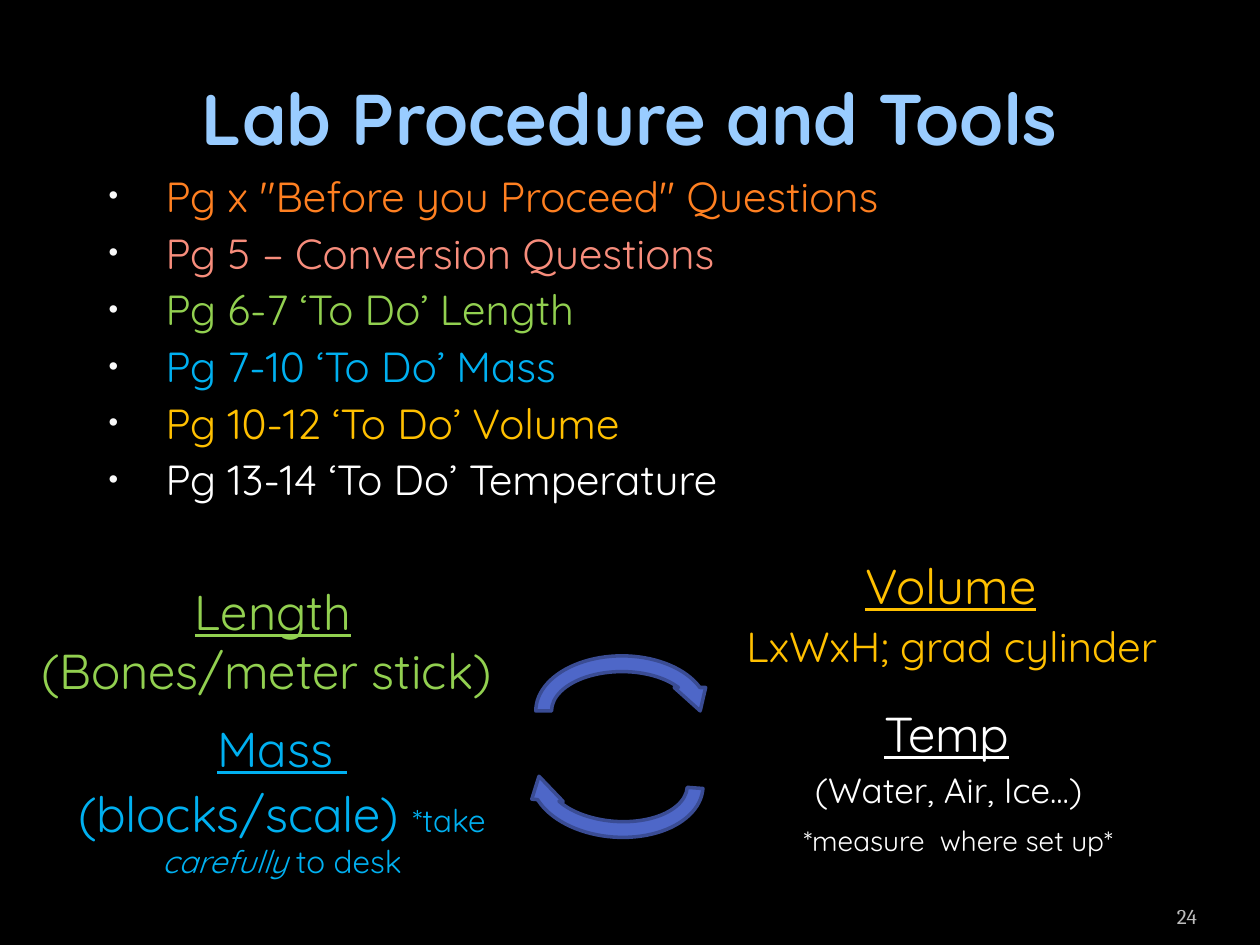
from lxml import etree
from pptx import Presentation
from pptx.dml.color import RGBColor
from pptx.enum.shapes import MSO_SHAPE
from pptx.enum.text import MSO_ANCHOR, MSO_AUTO_SIZE, PP_ALIGN
from pptx.oxml.ns import qn
from pptx.util import Pt

PX = 914400 / 126
CENTER, LEFT, RIGHT = PP_ALIGN.CENTER, PP_ALIGN.LEFT, PP_ALIGN.RIGHT
TOP, MIDDLE, BOTTOM = MSO_ANCHOR.TOP, MSO_ANCHOR.MIDDLE, MSO_ANCHOR.BOTTOM
ARROW = MSO_SHAPE.CIRCULAR_ARROW

BLACK = RGBColor(0x00, 0x00, 0x00)
WHITE = RGBColor(0xFF, 0xFF, 0xFF)
SKY = RGBColor(0x99, 0xCC, 0xFF)
ORANGE = RGBColor(0xFF, 0x80, 0x21)
CORAL = RGBColor(0xF7, 0x8D, 0x7C)
GREEN = RGBColor(0x92, 0xD0, 0x50)
BLUE = RGBColor(0x00, 0xB0, 0xF0)
GOLD = RGBColor(0xFF, 0xC0, 0x00)
GRAY = RGBColor(0xBD, 0xBD, 0xBD)
INDIGO = RGBColor(0x4E, 0x67, 0xC8)
NAVY = RGBColor(0x3A, 0x4C, 0x94)
DOT = "F9F9F9"

TITLE = "Lab Procedure and Tools"
STEPS = [
    ("Pg x \"Before you Proceed\" Questions", ORANGE),
    ("Pg 5 – Conversion Questions", CORAL),
    ("Pg 6-7 ‘To Do’ Length", GREEN),
    ("Pg 7-10 ‘To Do’ Mass", BLUE),
    ("Pg 10-12 ‘To Do’ Volume", GOLD),
    ("Pg 13-14 ‘To Do’ Temperature", WHITE),
]
# Box, colour, left margin, then paragraphs of (text, size, style) runs
TOOLS = [
    ((582, 549, 689, 134), GOLD, 62, [
        [("Volume", 28, "u"), (" ", 28, "")],
        [("LxWxH; grad cylinder ", 24, "")],
    ]),
    ((13, 575, 515, 84), GREEN, 5, [
        [("Length", 28, "u"), (" (Bones/meter stick) ", 28, "")],
    ]),
    ((663, 697, 576, 84), WHITE, 5, [
        [("Temp", 28, "u"), (" ", 28, "")],
        [("(Water, Air, Ice...) ", 20, "")],
        [(" ", 20, ""), ("*measure  where set up*", 16, "")],
    ]),
    ((20, 712, 519, 126), BLUE, 5, [
        [("Mass ", 28, "u")],
        [("(blocks/scale) ", 28, ""), ("*take ", 18, ""),
         ("carefully", 18, "i"), (" to desk", 18, "")],
    ]),
]
ARROWS = [((528, 648, 188, 126), 0), ((523, 719, 188, 126), 184.3)]


def emu(px):
    return round(px * PX)


def place(shape, box):
    shape.left, shape.top, shape.width, shape.height = map(emu, box)


def setup(shape, box, anchor=TOP):
    place(shape, box)
    frame = shape.text_frame
    frame.word_wrap = True
    frame.auto_size = MSO_AUTO_SIZE.NONE
    frame.vertical_anchor = anchor
    return frame


def new_par(frame, first, align=CENTER, margin=0, indent=0):
    par = frame.paragraphs[0] if first else frame.add_paragraph()
    par.alignment = align
    par.space_before = Pt(0 if first else 3.6)
    props = par._p.get_or_add_pPr()
    props.set("marL", str(emu(margin)))
    props.set("indent", str(emu(indent)))
    return par


def write(par, text, size=24, color=WHITE, font="Quicksand", bold=False, style=""):
    run = par.add_run()
    run.text = text
    face = run.font
    face.name, face.size, face.bold = font, Pt(size), bold
    face.color.rgb = color
    face.underline = "u" in style
    face.italic = "i" in style


def bullet(par):
    props = par._p.get_or_add_pPr()
    tint = etree.SubElement(props, qn("a:buClr"))
    etree.SubElement(tint, qn("a:srgbClr"), val=DOT)
    etree.SubElement(props, qn("a:buSzPct"), val="65000")
    etree.SubElement(props, qn("a:buChar"), char="•")


def main():
    deck = Presentation()
    deck.slide_width, deck.slide_height = emu(1260), emu(945)
    slide = deck.slides.add_slide(deck.slide_layouts[1])
    slide.background.fill.solid()
    slide.background.fill.fore_color.rgb = BLACK
    shapes = slide.shapes

    frame = setup(shapes.title, (63, 38, 1134, 157), MIDDLE)
    write(new_par(frame, True), TITLE, size=41, color=SKY, bold=True)

    frame = setup(slide.placeholders[1], (77, 164, 1106, 369))
    for i, (text, color) in enumerate(STEPS):
        par = new_par(frame, i == 0, LEFT, 76, -57)
        bullet(par)
        write(par, text, color=color)

    for box, color, margin, lines in TOOLS:
        frame = setup(shapes.add_textbox(0, 0, 0, 0), box)
        for i, runs in enumerate(lines):
            par = new_par(frame, i == 0, margin=margin)
            for text, size, style in runs:
                write(par, text, size=size, color=color, style=style)

    frame = setup(shapes.add_textbox(0, 0, 0, 0), (1092, 885, 105, 50), BOTTOM)
    frame.margin_left = frame.margin_right = 0
    write(new_par(frame, True, RIGHT), "24", size=12, color=GRAY, font="Cambria")

    for box, turn in ARROWS:
        arrow = shapes.add_shape(ARROW, 0, 0, 0, 0)
        place(arrow, box)
        arrow.rotation = turn
        arrow.shadow.inherit = False
        arrow.fill.solid()
        arrow.fill.fore_color.rgb = INDIGO
        arrow.line.color.rgb = NAVY
        arrow.line.width = Pt(2)

    deck.save("out.pptx")


if __name__ == "__main__":
    main()
